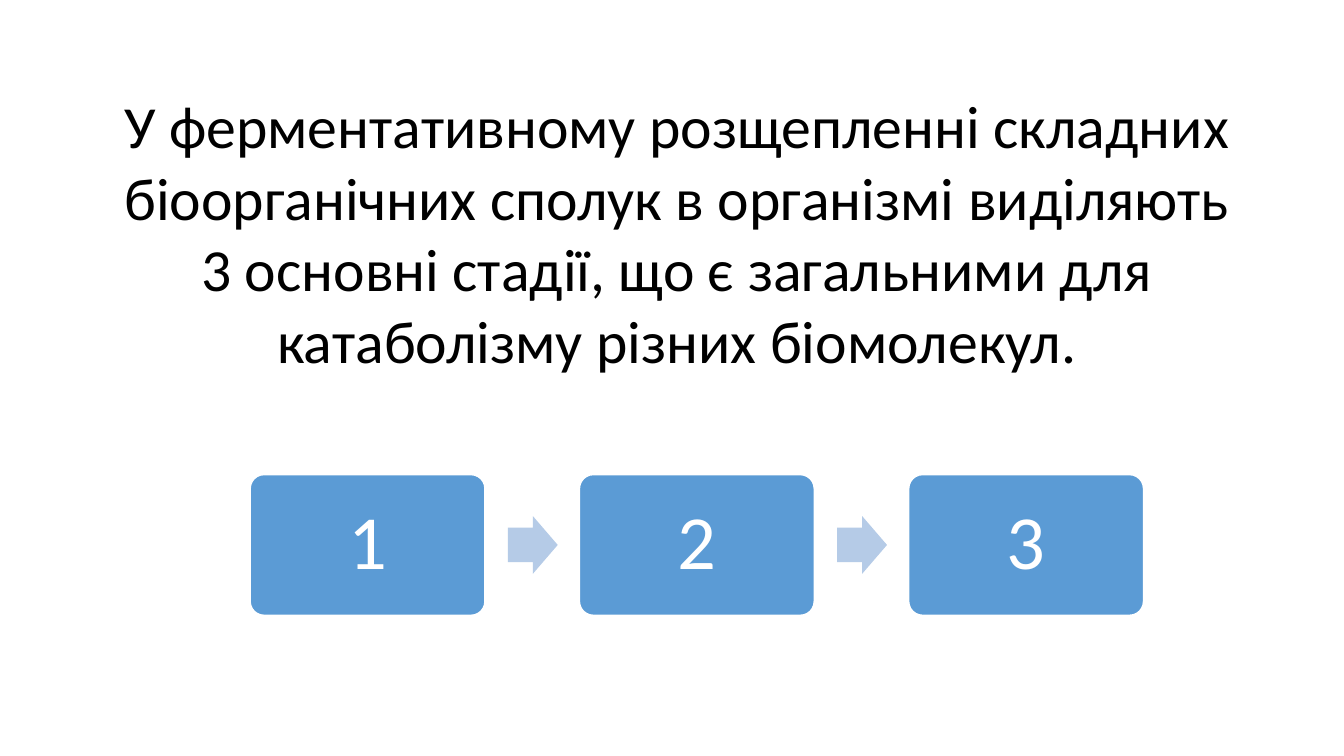
from dataclasses import dataclass

from pptx import Presentation
from pptx.dml.color import RGBColor
from pptx.enum.shapes import MSO_SHAPE
from pptx.enum.text import MSO_ANCHOR, MSO_AUTO_SIZE, PP_ALIGN
from pptx.util import Inches, Pt

# Content
STATEMENT = (
    "У ферментативному розщепленні складних біоорганічних сполук в організмі "
    "виділяють 3 основні стадії, що є загальними для катаболізму різних біомолекул."
)
STAGES = ["1", "2", "3"]


@dataclass(frozen=True)
class Theme:
    font: str = "Calibri"
    text: RGBColor = RGBColor(0x00, 0x00, 0x00)
    white: RGBColor = RGBColor(0xFF, 0xFF, 0xFF)
    stage: RGBColor = RGBColor(0x5B, 0x9B, 0xD5)
    arrow: RGBColor = RGBColor(0xB5, 0xCB, 0xE7)
    statement_size: int = 32
    stage_size: int = 41


THEME = Theme()

# Layout in inches
SLIDE_WIDTH = 10
SLIDE_HEIGHT = SLIDE_WIDTH * 9 / 16
STAGE_LEFT, STAGE_TOP, STAGE_WIDTH, STAGE_HEIGHT = 1.86, 3.53, 1.75, 1.05
STAGE_STEP = 2.45
ARROW_OFFSET, ARROW_WIDTH, ARROW_HEIGHT = 1.92, 0.37, 0.43


def write(frame, text, size, color, anchor):
    frame.text = text
    frame.word_wrap = True
    frame.auto_size = MSO_AUTO_SIZE.NONE
    frame.vertical_anchor = anchor
    para = frame.paragraphs[0]
    para.alignment = PP_ALIGN.CENTER
    font = para.runs[0].font
    font.name = THEME.font
    font.size = Pt(size)
    font.color.rgb = color


def add_block(page, kind, left, top, width, height, fill):
    shape = page.shapes.add_shape(
        kind, Inches(left), Inches(top), Inches(width), Inches(height)
    )
    shape.shadow.inherit = False
    shape.fill.solid()
    shape.fill.fore_color.rgb = fill
    shape.line.fill.background()
    return shape


def add_stage(page, label, left):
    box = add_block(page, MSO_SHAPE.ROUNDED_RECTANGLE, left, STAGE_TOP,
                    STAGE_WIDTH, STAGE_HEIGHT, THEME.stage)
    box.adjustments[0] = 0.1
    box.line.color.rgb = THEME.white
    box.line.width = Pt(1)
    write(box.text_frame, label, THEME.stage_size, THEME.white, MSO_ANCHOR.MIDDLE)
    box.text_frame.paragraphs[0].line_spacing = 0.9


def add_arrow(page, left):
    top = STAGE_TOP + (STAGE_HEIGHT - ARROW_HEIGHT) / 2
    arrow = add_block(page, MSO_SHAPE.RIGHT_ARROW, left, top,
                      ARROW_WIDTH, ARROW_HEIGHT, THEME.arrow)
    arrow.adjustments[0] = 0.6
    arrow.adjustments[1] = 0.5


def main():
    deck = Presentation()
    deck.slide_width, deck.slide_height = Inches(SLIDE_WIDTH), Inches(SLIDE_HEIGHT)
    page = deck.slides.add_slide(deck.slide_layouts[5])

    # Statement
    title = page.shapes.title
    title.left, title.top = Inches(0.67), Inches(0.61)
    title.width, title.height = Inches(8.74), Inches(2.26)
    write(title.text_frame, STATEMENT, THEME.statement_size, THEME.text,
          MSO_ANCHOR.TOP)

    # Stages with an arrow between neighbours
    for index, label in enumerate(STAGES):
        left = STAGE_LEFT + index * STAGE_STEP
        add_stage(page, label, left)
        if index < len(STAGES) - 1:
            add_arrow(page, left + ARROW_OFFSET)

    deck.save("out.pptx")


if __name__ == "__main__":
    main()
